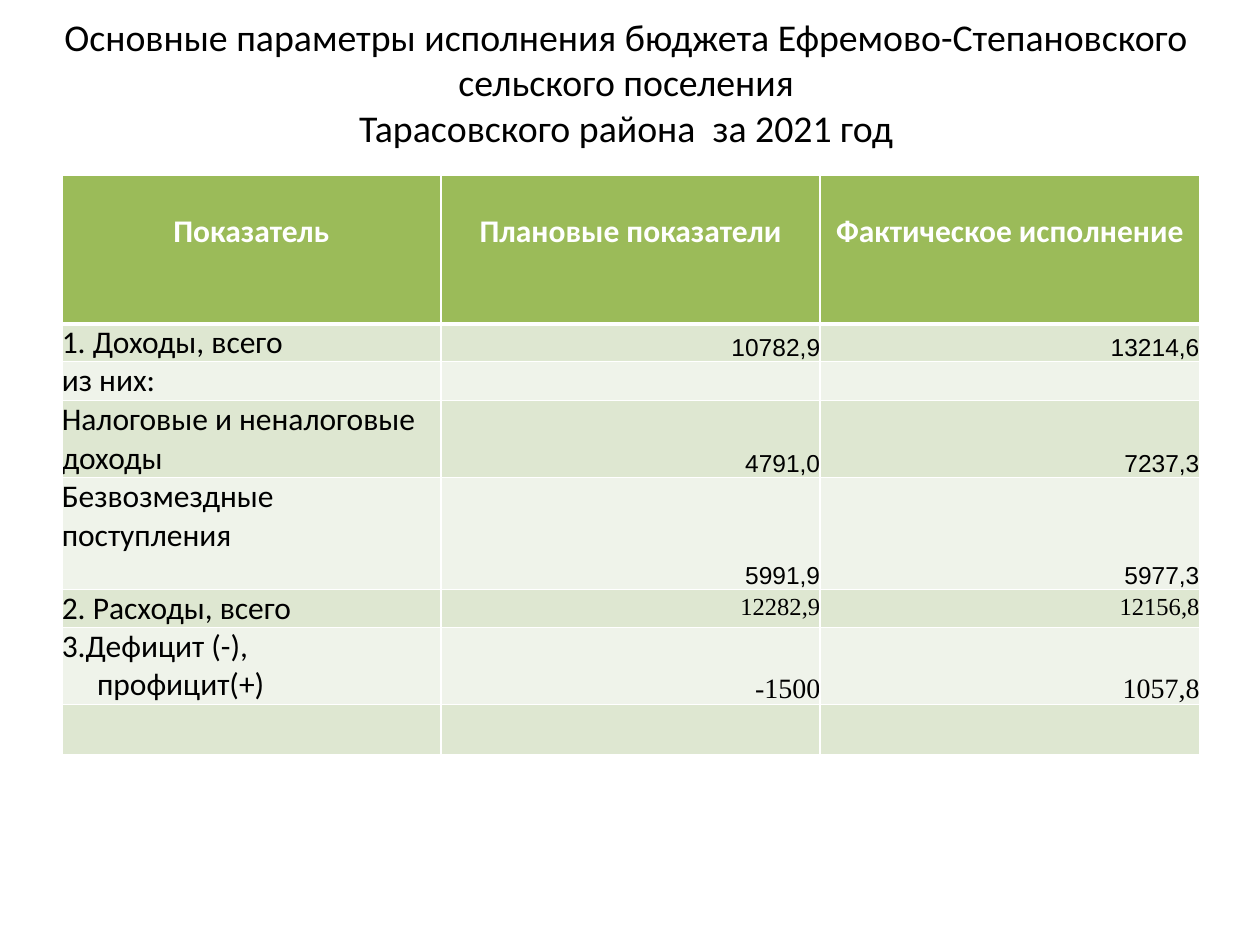
from lxml.etree import SubElement
from pptx import Presentation
from pptx.dml.color import RGBColor
from pptx.enum.text import MSO_ANCHOR as Anchor, PP_ALIGN as Align
from pptx.oxml.ns import qn
from pptx.util import Inches, Pt

BLACK = RGBColor(0x00, 0x00, 0x00)
WHITE = RGBColor(0xFF, 0xFF, 0xFF)
GREEN = RGBColor(0x9B, 0xBB, 0x59)
BANDS = (RGBColor(0xDE, 0xE7, 0xD1), RGBColor(0xEF, 0xF3, 0xEA))

TITLE = [
    "Основные параметры исполнения бюджета Ефремово-Степановского сельского поселения",
    "Тарасовского района  за 2021 год",
]
HEADERS = ["Показатель", "Плановые показатели", "Фактическое исполнение"]
SANS = ("Arial", 14, Anchor.BOTTOM)
SERIF = ("Times New Roman", 14, Anchor.TOP)
LARGE_SERIF = ("Times New Roman", 16, Anchor.BOTTOM)
ROWS = [
    (0.3, ["1. Доходы, всего", "10782,9", "13214,6"], SANS),
    (0.31, ["из них:", "", ""], SANS),
    (0.61, ["Налоговые и неналоговые доходы", "4791,0", "7237,3"], SANS),
    (0.89, ["Безвозмездные поступления", "5991,9", "5977,3"], SANS),
    (0.3, ["2. Расходы, всего", "12282,9", "12156,8"], SERIF),
    (0.61, ["3.Дефицит (-),\nпрофицит(+)", "-1500", "1057,8"], LARGE_SERIF),
    (0.4, ["", "", ""], SANS),
]


class BudgetSlide:
    """Draws the budget title and table on one slide in a shared style."""

    def __init__(self, presentation):
        self.slide = presentation.slides.add_slide(presentation.slide_layouts[6])

    def format(self, paragraph, size, font="Calibri", color=BLACK, bold=False, align=Align.LEFT):
        paragraph.alignment = align
        paragraph.font.size = Pt(size)
        paragraph.font.name = font
        paragraph.font.color.rgb = color
        paragraph.font.bold = bold

    def title(self, left, top, width, height):
        box = self.slide.shapes.add_textbox(Inches(left), Inches(top), Inches(width), Inches(height))
        frame = box.text_frame
        frame.word_wrap = True
        frame.vertical_anchor = Anchor.MIDDLE
        frame.margin_top = frame.margin_bottom = 0
        frame.text = "\n".join(TITLE)
        for paragraph in frame.paragraphs:
            self.format(paragraph, 21.6, align=Align.CENTER)

    def cell(self, cell, text, fill, anchor=Anchor.TOP, top=0, bottom_line=1, spacing=None, **style):
        cell.fill.solid()
        cell.fill.fore_color.rgb = fill
        cell.margin_left = cell.margin_right = cell.margin_bottom = 0
        cell.margin_top = Inches(top)
        cell.vertical_anchor = anchor
        cell.text = text
        for paragraph in cell.text_frame.paragraphs:
            self.format(paragraph, **style)
            paragraph.line_spacing = spacing
        for paragraph in cell.text_frame.paragraphs[1:]:
            paragraph._p.get_or_add_pPr().set("marL", str(Inches(0.28)))
        self.borders(cell, bottom_line)

    def borders(self, cell, bottom_line):
        properties = cell._tc.get_or_add_tcPr()
        widths = {"a:lnL": 1, "a:lnR": 1, "a:lnT": 1, "a:lnB": bottom_line}
        for position, (tag, width) in enumerate(widths.items()):
            line = SubElement(properties, qn(tag), w=str(Pt(width)))
            properties.insert(position, line)
            solid = SubElement(line, qn("a:solidFill"))
            SubElement(solid, qn("a:srgbClr"), val=str(WHITE))

    def table(self, left, top, width, header_height):
        heights = [header_height] + [height for height, _, _ in ROWS]
        frame = self.slide.shapes.add_table(
            len(heights), len(HEADERS), Inches(left), Inches(top), Inches(width), Inches(sum(heights)))
        table = frame.table
        for row, height in zip(table.rows, heights):
            row.height = Inches(height)
        for column, header in enumerate(HEADERS):
            self.cell(table.cell(0, column), header, GREEN, top=0.3, bottom_line=3,
                      size=18, color=WHITE, bold=True, align=Align.CENTER)
        for row, (_, (label, *values), (font, size, anchor)) in enumerate(ROWS, 1):
            fill = BANDS[(row - 1) % 2]
            self.cell(table.cell(row, 0), label, fill, size=18)
            for column, value in enumerate(values, 1):
                self.cell(table.cell(row, column), value, fill, anchor, spacing=1.15,
                          size=size, font=font, align=Align.RIGHT)


def main():
    presentation = Presentation()
    presentation.slide_width = Inches(10)
    presentation.slide_height = Inches(7.5)
    budget = BudgetSlide(presentation)
    budget.title(0.36, 0.1, 9.22, 1.1)
    budget.table(0.49, 1.39, 9.03, 1.18)
    presentation.save("out.pptx")


if __name__ == "__main__":
    main()
